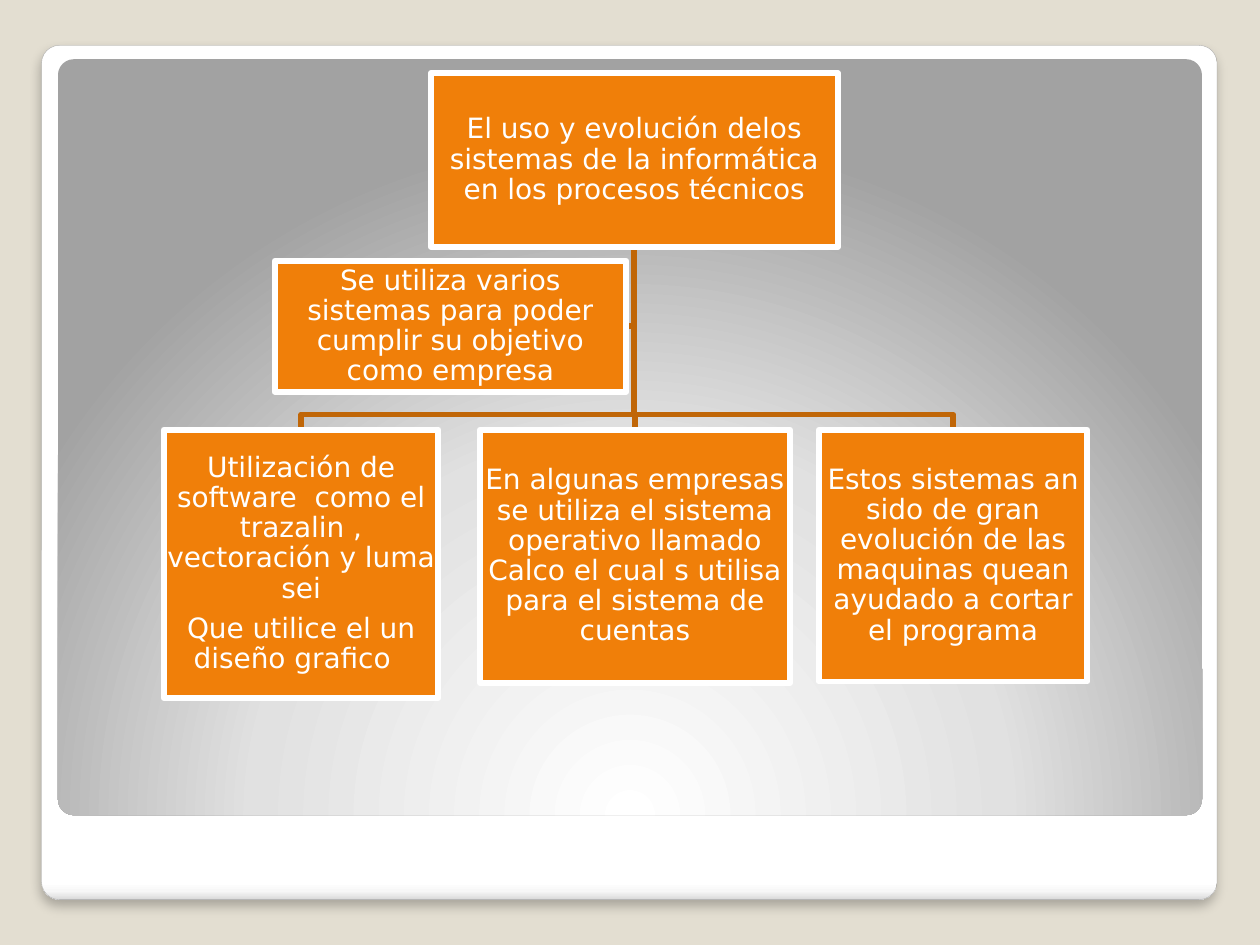
from pptx import Presentation
from pptx import oxml
from pptx import util as u
from pptx.dml import color
from pptx.enum import shapes, text
from pptx.oxml import ns

COLORS = {
    "page": "E3DED1",
    "white": "FFFFFF",
    "edge": "A4A4A4",
    "box": "F07F09",
    "link": "C06607",
    "shadow": "000000",
}
CARD_STOPS = [(0, "FFFFFF"), (98, "FFFFFF"), (99, "F7F7F7"), (100, "DADADA")]
PANEL_STOPS = [(0, "FFFFFF"), (55, "E1E1E1"), (100, "A2A2A2")]
LINEAR = '<a:lin ang="5400000" scaled="0"/>'
RADIAL = ('<a:path path="circle"><a:fillToRect l="50000" t="175000" '
          'r="50000" b="-75000"/></a:path>')
FONT = "DejaVu Sans"
FONT_SIZE = 16
LINE_WIDTH = 3.35

TRUNK_X, TRUNK_TOP = 5.03, 1.96
BRANCH_Y, CHILD_TOP = 3.29, 3.41


def rgb(name):
    return color.RGBColor.from_string(COLORS[name])


class OrgSlide:
    def __init__(self, prs):
        self.s = prs.slides.add_slide(prs.slide_layouts[6])
        fill = self.s.background.fill
        fill.solid()
        fill.fore_color.rgb = rgb("page")

    def outline(self, sp, name, width=LINE_WIDTH):
        sp.line.color.rgb = rgb(name)
        sp.line.width = u.Pt(width)

    def shape(self, kind, at):
        sp = self.s.shapes.add_shape(kind, *map(u.Inches, at))
        sp.shadow.inherit = False
        return sp

    def panel(self, at, stops, direction):
        sp = self.shape(shapes.MSO_SHAPE.ROUNDED_RECTANGLE, at)
        sp.adjustments[0] = 0.021
        gs = "".join(f'<a:gs pos="{pos * 1000}"><a:srgbClr val="{value}"/></a:gs>'
                     for pos, value in stops)
        grad = oxml.parse_xml(f'<a:gradFill {ns.nsdecls("a")} rotWithShape="1">'
                              f'<a:gsLst>{gs}</a:gsLst>{direction}</a:gradFill>')
        sp._element.spPr.find(ns.qn("a:prstGeom")).addnext(grad)
        sp.line.fill.background()
        return sp

    def drop_shadow(self, sp, alpha, blur, dist):
        effects = sp._element.spPr.find(ns.qn("a:effectLst"))
        effects.append(oxml.parse_xml(
            f'<a:outerShdw {ns.nsdecls("a")} blurRad="{u.Pt(blur)}" dist="{u.Pt(dist)}" '
            f'dir="5400000" algn="t" rotWithShape="0"><a:srgbClr val="{COLORS["shadow"]}">'
            f'<a:alpha val="{alpha * 1000}"/></a:srgbClr></a:outerShdw>'))

    def link(self, *points):
        pts = [(u.Inches(x), u.Inches(y)) for x, y in points]
        builder = self.s.shapes.build_freeform(*pts[0])
        builder.add_line_segments(pts[1:], close=False)
        sp = builder.convert_to_shape()
        sp.shadow.inherit = False
        sp.fill.background()
        self.outline(sp, "link")

    def box(self, at, content):
        sp = self.shape(shapes.MSO_SHAPE.RECTANGLE, at)
        sp.fill.solid()
        sp.fill.fore_color.rgb = rgb("box")
        self.outline(sp, "white")
        tf = sp.text_frame
        tf.word_wrap = True
        tf.vertical_anchor = text.MSO_ANCHOR.MIDDLE
        tf.margin_left = tf.margin_right = u.Inches(0.01)
        tf.margin_top = tf.margin_bottom = u.Inches(0.01)
        tf.text = content
        for p in tf.paragraphs:
            p.alignment = text.PP_ALIGN.CENTER
            p.line_spacing = 0.9
            p.space_after = u.Pt(FONT_SIZE * 0.35)
            for r in p.runs:
                r.font.name = FONT
                r.font.size = u.Pt(FONT_SIZE)
                r.font.color.rgb = rgb("white")


def main():
    prs = Presentation()
    prs.slide_width, prs.slide_height = u.Inches(10), u.Inches(7.5)
    slide = OrgSlide(prs)

    card = slide.panel((0.33, 0.36, 9.33, 6.78), CARD_STOPS, LINEAR)
    slide.outline(card, "edge", 0.16)
    slide.drop_shadow(card, alpha=25, blur=6, dist=4)
    slide.panel((0.46, 0.47, 9.08, 6), PANEL_STOPS, RADIAL)

    children = [
        (1.3, 2.18, 2.13, "Utilización de software  como el trazalin , vectoración y luma sei\n"
                          "Que utilice el un diseño grafico  "),
        (3.81, 2.46, 2.01, "En algunas empresas se utiliza el sistema operativo llamado "
                           "Calco el cual s utilisa para el sistema de cuentas"),
        (6.5, 2.13, 2, "Estos sistemas an sido de gran evolución de las maquinas "
                       "quean ayudado a cortar el programa"),
    ]
    trunk = (TRUNK_X, TRUNK_TOP)
    slide.link(trunk, (TRUNK_X, 2.59), (4.97, 2.59))
    for left, width, _, _ in children:
        x = left + width / 2
        slide.link(trunk, (TRUNK_X, BRANCH_Y), (x, BRANCH_Y), (x, CHILD_TOP))

    slide.box((3.42, 0.58, 3.23, 1.38),
              "El uso y evolución delos sistemas de la informática en los procesos técnicos")
    for left, width, height, content in children:
        slide.box((left, CHILD_TOP, width, height), content)
    slide.box((2.18, 2.07, 2.79, 1.04),
              "Se utiliza varios sistemas para poder cumplir su objetivo como empresa")

    prs.save("out.pptx")


if __name__ == "__main__":
    main()
